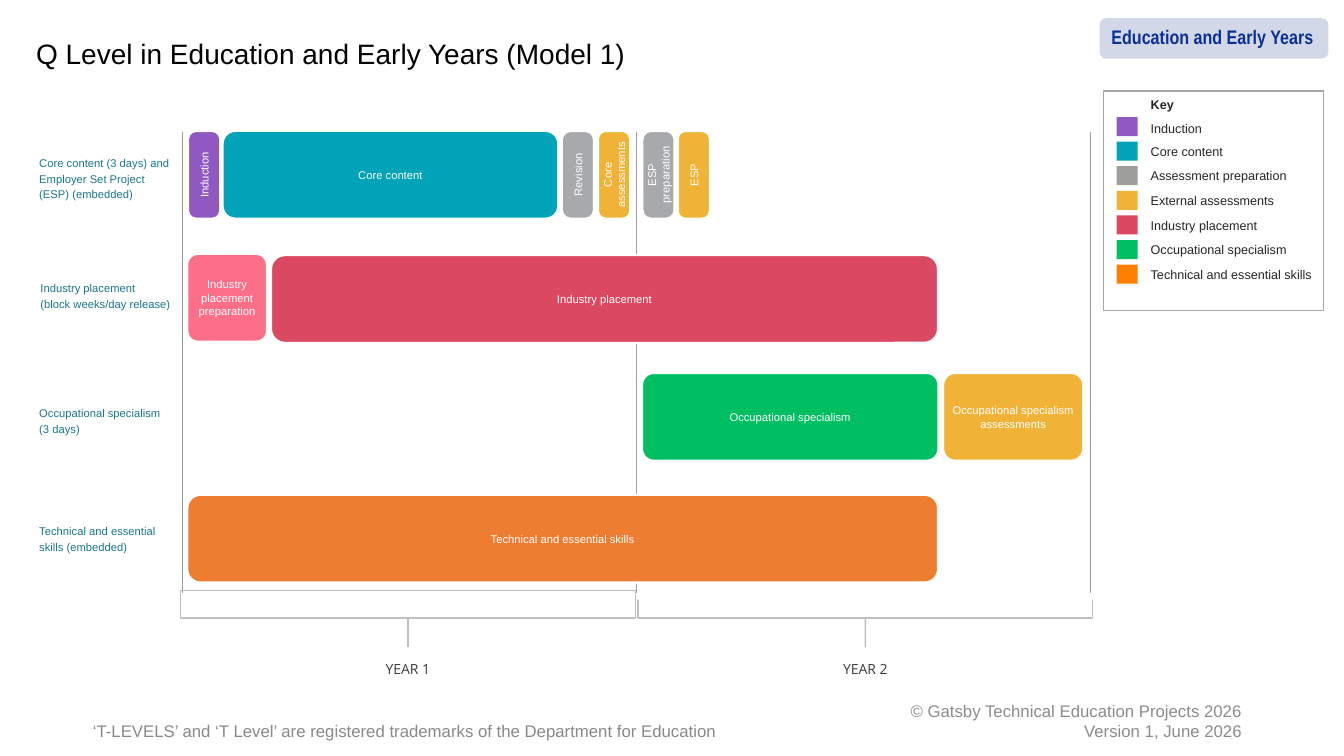
"""Build the two-year Q Level timeline slide for Education and Early Years."""
from lxml.etree import SubElement
from pptx import Presentation
from pptx.dml.color import RGBColor
from pptx.enum.shapes import MSO_CONNECTOR, MSO_SHAPE
from pptx.enum.text import MSO_ANCHOR, MSO_AUTO_SIZE, PP_ALIGN
from pptx.oxml.ns import qn
from pptx.util import Cm, Pt

hex_color = RGBColor.from_string
USUAL, SLIM, SIDELESS, NONE = (0.25, 0.13), (0.1, 0.13), (0, 0.13), (0, 0)


def add_box(kind, left, top, width, height, fill=None, outline=None, weight=1):
    box = slide.shapes.add_shape(kind, Cm(left), Cm(top), Cm(width), Cm(height))
    box.shadow.inherit = False
    if fill:
        box.fill.solid()
        box.fill.fore_color.rgb = hex_color(fill)
    else:
        box.fill.background()
    if outline:
        box.line.color.rgb = hex_color(outline)
        box.line.width = Pt(weight)
    else:
        box.line.fill.background()
    return box


def write(shape, lines, size, color, font="Arial", align=PP_ALIGN.LEFT,
          anchor=MSO_ANCHOR.TOP, insets=USUAL, spacing=None, bold=False):
    frame = shape.text_frame
    frame.word_wrap = True
    frame.auto_size = MSO_AUTO_SIZE.NONE
    frame.vertical_anchor = anchor
    frame.margin_left = frame.margin_right = Cm(insets[0])
    frame.margin_top = frame.margin_bottom = Cm(insets[1])
    frame.text = "\n".join(lines)
    for paragraph in frame.paragraphs:
        paragraph.alignment = align
        if spacing:
            paragraph.line_spacing = spacing
        paragraph.font.name = font
        paragraph.font.size = Pt(size)
        paragraph.font.bold = bold
        paragraph.font.color.rgb = hex_color(color)
    return frame


presentation = Presentation()
presentation.slide_width, presentation.slide_height = Cm(33.87), Cm(19.05)
slide = presentation.slides.add_slide(presentation.slide_layouts[5])

title = slide.shapes.title
title.left, title.top, title.width, title.height = Cm(0.66), Cm(0.79), Cm(25.07), Cm(1.12)
write(title, ["Q Level in Education and Early Years (Model 1)"], 20, "000000")

year_brackets = [add_box(MSO_SHAPE.RECTANGLE, left, 14.88, 11.46, 0.69, outline="BFBFBF")
                 for left in (4.55, 16.08)]
add_box(MSO_SHAPE.RECTANGLE, 16.03, 14.68, 11.61, 0.43, fill="FFFFFF")

year_centres = (10.28, 21.81)
guides = [(x, 15.57, 16.31, "BFBFBF", 1, bracket)
          for x, bracket in zip(year_centres, year_brackets)]
guides += [(x, 3.33, 14.94, "9E9E9D", 0.75, None) for x in (16.03, 4.6, 27.48)]
for x, top, bottom, color, weight, bracket in guides:
    guide = slide.shapes.add_connector(MSO_CONNECTOR.STRAIGHT, Cm(x), Cm(top), Cm(x), Cm(bottom))
    if bracket:
        guide.begin_connect(bracket, 2)
    guide.line.color.rgb = hex_color(color)
    guide.line.width = Pt(weight)
    SubElement(guide._element.spPr, qn("a:effectLst"))

for year, centre in enumerate(year_centres, 1):
    year_label = slide.shapes.add_textbox(Cm(centre - 0.8), Cm(16.64), Cm(1.6), Cm(0.36))
    write(year_label, [f"YEAR {year}"], 10, "3C3C3B", font="Open Sans",
          align=PP_ALIGN.CENTER, insets=NONE, spacing=1.02)

badge = add_box(MSO_SHAPE.ROUNDED_RECTANGLE, 27.71, 0.46, 5.77, 1.02, fill="D3D8E9")
write(badge, ["Education and Early Years"], 14, "0C2F96", font="Arial Narrow", bold=True)

copyright_box = slide.shapes.add_textbox(Cm(22.43), Cm(17.65), Cm(9.12), Cm(1.02))
write(copyright_box, ["© Gatsby Technical Education Projects 2026", "Version 1, June 2026"],
      12, "8C8C8C", align=PP_ALIGN.RIGHT, anchor=MSO_ANCHOR.MIDDLE)
trademark_box = slide.shapes.add_textbox(Cm(2.34), Cm(18.16), Cm(17.3), Cm(0.51))
write(trademark_box,
      ["‘T-LEVELS’ and ‘T Level’ are registered trademarks of the Department for Education"],
      12, "898989", insets=NONE)

row_labels = [
    (0.99, 3.89, 1.19, ["Core content (3 days) and Employer Set Project (ESP) (embedded)"]),
    (1.02, 7.04, 0.79, ["Industry placement", "(block weeks/day release)"]),
    (0.99, 10.19, 0.79, ["Occupational specialism", "(3 days)"]),
    (0.99, 13.16, 0.79, ["Technical and essential skills (embedded)"]),
]
for left, top, height, lines in row_labels:
    row_label = slide.shapes.add_textbox(Cm(left), Cm(top), Cm(3.4), Cm(height))
    write(row_label, lines, 8, "1A768D", insets=NONE, spacing=1.16)

PURPLE, TEAL, AMBER, RED, GREEN = "9059C2", "00A3B7", "F0B337", "DB4862", "00BF63"
BAR_HEIGHT, NARROW = 2.21, 0.81
bars = [
    ("Induction", 4.74, 3.3, NARROW, PURPLE, 0.249, USUAL),
    ("Core content", 5.61, 3.3, 8.46, TEAL, 0.146, USUAL),
    ("Revision", 14.16, 3.3, NARROW, "A7A9AC", 0.267, USUAL),
    ("Core assessments", 15.07, 3.3, NARROW, AMBER, 0.24, SLIM),
    ("ESP preparation", 16.19, 3.3, NARROW, "A7A9AC", 0.267, USUAL),
    ("ESP", 17.08, 3.3, NARROW, AMBER, 0.24, SLIM),
    ("Industry placement preparation", 4.72, 6.4, 2.01, "FD6F88", 0.134, SIDELESS),
    ("Industry placement", 6.83, 6.43, 16.81, RED, 0.159, USUAL),
    ("Occupational specialism", 16.18, 9.4, 7.47, GREEN, 0.134, USUAL),
    ("Occupational specialism assessments", 23.77, 9.4, 3.53, AMBER, 0.137, SLIM),
    ("Technical and essential skills", 4.72, 12.47, 18.92, "ED7D31", 0.152, USUAL),
]
for label, left, top, width, fill, rounding, insets in bars:
    height, rotation = BAR_HEIGHT, 0
    if width == NARROW:
        turn = (BAR_HEIGHT - NARROW) / 2
        left, top, width, height, rotation = left - turn, top + turn, BAR_HEIGHT, NARROW, 270
    bar = add_box(MSO_SHAPE.ROUNDED_RECTANGLE, left, top, width, height, fill, "FFFFFF", 1.5)
    bar.adjustments[0] = rounding
    bar.rotation = rotation
    write(bar, [label], 8, "FFFFFF", align=PP_ALIGN.CENTER, anchor=MSO_ANCHOR.MIDDLE,
          insets=insets)

key_entries = {
    "Induction": PURPLE,
    "Core content": TEAL,
    "Assessment preparation": "9E9E9D",
    "External assessments": AMBER,
    "Industry placement": RED,
    "Occupational specialism": GREEN,
    "Technical and essential skills": "FF7F00",
}
key = add_box(MSO_SHAPE.RECTANGLE, 27.81, 2.29, 5.54, 5.54, outline="A6A6A6")
key_frame = write(key, ["Key", *key_entries], 9, "262626", spacing=1.08)
key_frame.margin_left = Cm(1.19)
key_frame.paragraphs[0].font.bold = True
for entry in key_frame.paragraphs[1:]:
    entry.space_before = Pt(6)
for entry in key_frame.paragraphs[1:4]:
    entry.line_spacing = 1.0
for index, color in enumerate(key_entries.values()):
    add_box(MSO_SHAPE.RECTANGLE, 28.14, 2.95 + 0.62 * index, 0.53, 0.48, fill=color)

presentation.save("out.pptx")
